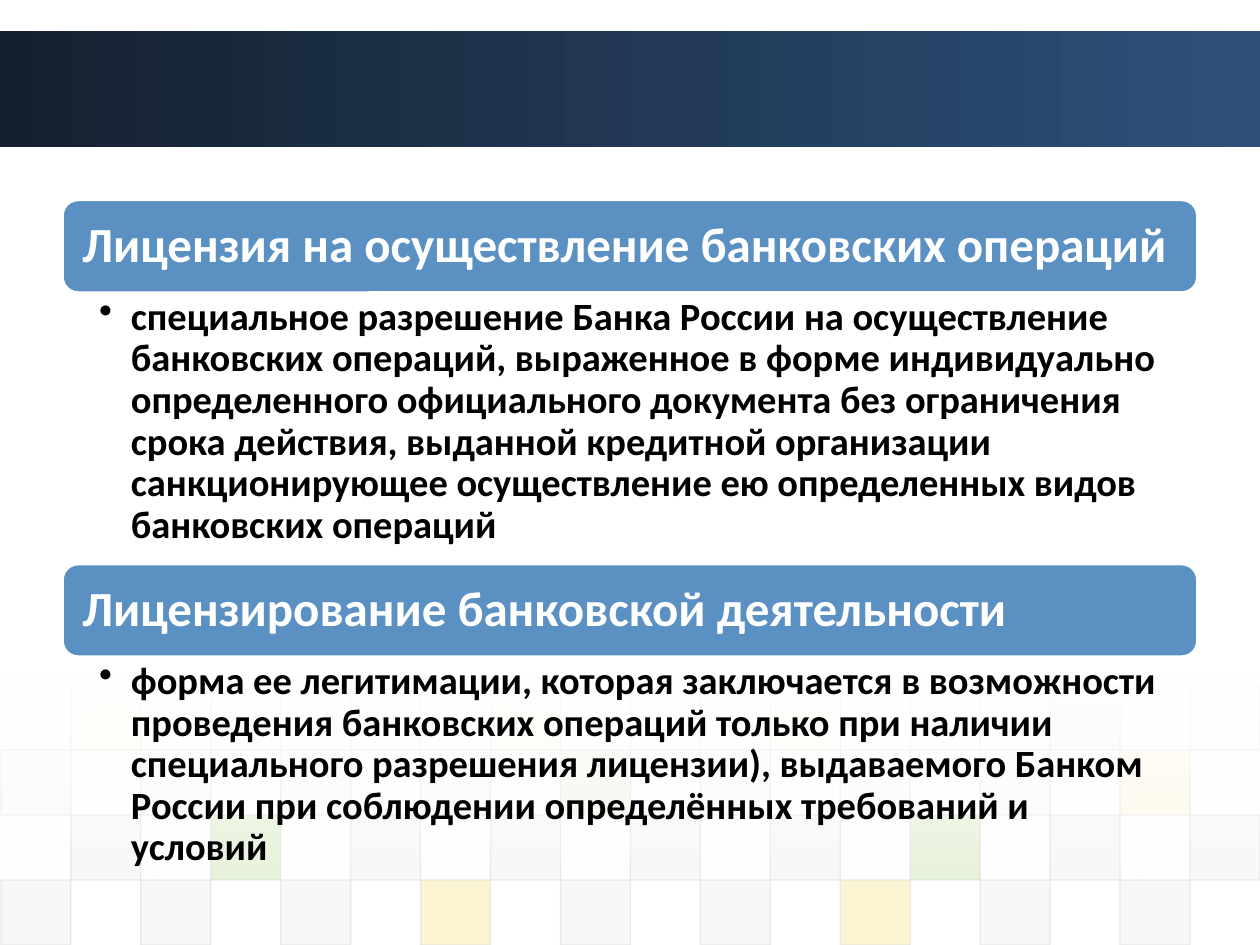
from lxml.etree import SubElement
from pptx import Presentation
from pptx.dml.color import RGBColor
from pptx.enum.shapes import MSO_SHAPE
from pptx.enum.text import MSO_ANCHOR, PP_ALIGN
from pptx.oxml.ns import qn
from pptx.util import Cm, Pt

COLORS = {
    "navy": "14202F", "blue": "2E507A", "header": "5A90C2",
    "white": "FFFFFF", "black": "000000", "edge": "DDDDDD",
    "D": "DDDDDD", "E": "EAEAEA", "G": "8AC246", "Y": "EFC821",
}
MOSAIC = [("YEEYDYEGE", 5), ("DDDDGDDDY", 10), ("DGDDDDGDD", 20), ("DDDYDDYDD", 20)]
TILE_W, TILE_H, MOSAIC_TOP = 1.41, 1.31, 13.81
SECTIONS = [
    (4.04, 5.49, "Лицензия на осуществление банковских операций",
     "специальное разрешение Банка России на осуществление банковских операций, "
     "выраженное в форме индивидуально определенного официального документа без "
     "ограничения срока действия, выданной кредитной организации санкционирующее "
     "осуществление ею определенных видов банковских операций"),
    (11.38, 3.63, "Лицензирование банковской деятельности",
     "форма ее легитимации, которая заключается в возможности проведения банковских "
     "операций только при наличии специального разрешения лицензии), выдаваемого "
     "Банком России при соблюдении определённых требований и условий"),
]


def rgb(name):
    """Return the named colour."""
    return RGBColor.from_string(COLORS[name])


def set_alpha(fill, percent):
    """Set the opacity of every colour inside a fill element."""
    for clr in fill.iter(qn("a:srgbClr")):
        SubElement(clr, qn("a:alpha")).set("val", str(percent * 1000))


def add_block(s, kind, x, y, w, h):
    """Add a preset shape without shadow or outline."""
    sp = s.shapes.add_shape(kind, Cm(x), Cm(y), Cm(w), Cm(h))
    sp.shadow.inherit = False
    sp.line.fill.background()
    return sp


def add_gradient(s, y, h, angle, names):
    """Add a full-width band with a two-stop gradient and return its stops."""
    sp = add_block(s, MSO_SHAPE.RECTANGLE, 0, y, 25.4, h)
    sp.fill.gradient()
    sp.fill.gradient_angle = angle
    for stop, name in zip(sp.fill.gradient_stops, names):
        stop.color.rgb = rgb(name)
    return sp._element.spPr.findall(".//" + qn("a:gs"))


def add_mosaic(s):
    """Add the checkered tiles, shifted by one column on every other row."""
    for row, (tiles, alpha) in enumerate(MOSAIC):
        for i, name in enumerate(tiles):
            col = 2 * i + (row + 1) % 2
            sp = add_block(s, MSO_SHAPE.RECTANGLE, 0.02 + col * TILE_W,
                           MOSAIC_TOP + row * TILE_H, TILE_W, TILE_H)
            sp.fill.solid()
            sp.fill.fore_color.rgb = rgb(name)
            sp.line.color.rgb = rgb("edge")
            sp.line.width = Pt(0.75)
            spPr = sp._element.spPr
            set_alpha(spPr.find(qn("a:solidFill")), alpha)
            set_alpha(spPr.find(qn("a:ln")), 60)


def add_text(s, box, insets, text, size, color, anchor, bullet=False):
    """Add a wrapped bold text box, with a bullet if asked."""
    tf = s.shapes.add_textbox(*map(Cm, box)).text_frame
    tf.word_wrap = True
    tf.vertical_anchor = anchor
    tf.margin_left, tf.margin_top, tf.margin_right, tf.margin_bottom = map(Cm, insets)
    p = tf.paragraphs[0]
    p.alignment = PP_ALIGN.LEFT
    p.line_spacing = 0.9
    if bullet:
        p.level = 1
        pPr = p._p.get_or_add_pPr()
        pPr.set("marL", str(Cm(0.64)))
        pPr.set("indent", str(-Cm(0.64)))
        SubElement(pPr, qn("a:buChar")).set("char", "•")
    r = p.add_run()
    r.text = text
    r.font.name = "Calibri"
    r.font.size = Pt(size)
    r.font.bold = True
    r.font.color.rgb = rgb(color)


def add_section(s, top, height, title, body):
    """Add a rounded header with its description below."""
    sp = add_block(s, MSO_SHAPE.ROUNDED_RECTANGLE, 1.27, top, 22.86, 1.85)
    sp.fill.solid()
    sp.fill.fore_color.rgb = rgb("header")
    sp.line.color.rgb = rgb("white")
    sp.line.width = Pt(1)
    add_text(s, (1.36, top + 0.09, 22.68, 1.67), (0.3,) * 4, title, 28, "white",
             MSO_ANCHOR.MIDDLE)
    add_text(s, (1.27, top + 1.85, 22.86, height), (0.73, 0.1, 0.56, 0.1), body, 22,
             "black", MSO_ANCHOR.TOP, bullet=True)


def main():
    """Build and save the slide."""
    prs = Presentation()
    prs.slide_width, prs.slide_height = Cm(25.4), Cm(19.05)
    s = prs.slides.add_slide(prs.slide_layouts[6])
    add_gradient(s, 0.63, 2.34, 0, ("navy", "blue"))
    add_mosaic(s)
    for stop, alpha in zip(add_gradient(s, 13.64, 4.11, 270, ("white", "white")), (90, 0)):
        set_alpha(stop, alpha)
    for section in SECTIONS:
        add_section(s, *section)
    prs.save("out.pptx")


if __name__ == "__main__":
    main()
